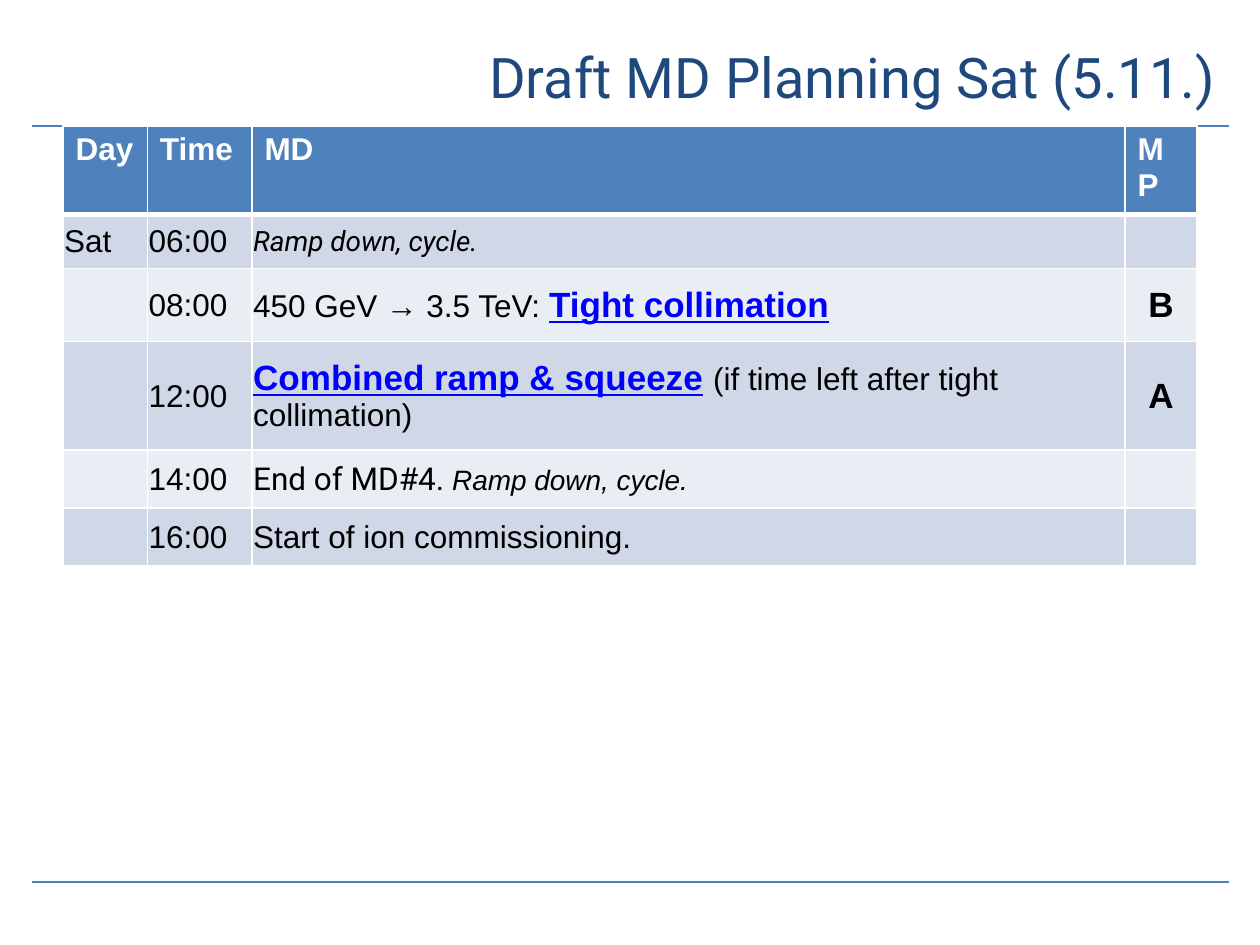
import pptx
import pptx.util
import pptx.dml.color
import pptx.enum.shapes
import pptx.enum.text
import pptx.oxml
import pptx.oxml.ns
from lxml import etree

Inches = pptx.util.Inches
Pt = pptx.util.Pt
ALIGN = pptx.enum.text.PP_ALIGN
MIDDLE = pptx.enum.text.MSO_ANCHOR.MIDDLE

HEADER, BAND, LIGHT = "4F81BD", "D0D8E8", "E9EDF4"
COLS = [0.67, 0.83, 6.93, 0.57]
ROWS = [0.41, 0.43, 0.58, 0.86, 0.46, 0.46]
HEADINGS = ["Day", "Time", "MD", "MP"]

# Run formats
LINK = dict(size=20, color="0000FF", bold=True, underline=True)
NOTE = dict(size=16, italic=True)

# Day, time, runs of the MD column, MP class
SCHEDULE = [
    ("Sat", "06:00", [("Ramp down, cycle.", dict(NOTE, font="Roboto"))], ""),
    ("", "08:00", [("450 GeV → 3.5 TeV: ", {}), ("Tight collimation", LINK)], "B"),
    ("", "12:00", [("Combined ramp & squeeze", LINK), (" ", dict(size=20)),
                   ("(if time left after tight collimation)", {})], "A"),
    ("", "14:00", [("End of MD#4. ", dict(font="Roboto")),
                   ("Ramp down, cycle.", NOTE)], ""),
    ("", "16:00", [("Start of ion commissioning.", {})], ""),
]


def rgb(value):
    return pptx.dml.color.RGBColor.from_string(value)


def add_run(p, text, size=18, font="Arial", color="000000", bold=False,
            italic=False, underline=False):
    r = p.add_run()
    r.text = text
    r.font.size = Pt(size)
    r.font.name = font
    r.font.color.rgb = rgb(color)
    r.font.bold = bold
    r.font.italic = italic
    r.font.underline = underline


def add_rule(s, y):
    line = s.shapes.add_connector(pptx.enum.shapes.MSO_CONNECTOR.STRAIGHT,
                                  Inches(0.25), Inches(y), Inches(9.75), Inches(y))
    line.line.color.rgb = rgb("4B7EBC")
    line.line.width = Pt(1.5)
    etree.SubElement(line._element.spPr, pptx.oxml.ns.qn("a:effectLst"))


def add_title(s, text):
    sp = s.shapes.add_textbox(Inches(1.75), Inches(0.17), Inches(8), Inches(0.87))
    tf = sp.text_frame
    tf.word_wrap = True
    tf.vertical_anchor = MIDDLE
    p = tf.paragraphs[0]
    p.alignment = ALIGN.RIGHT
    add_run(p, text, size=32, font="Roboto", color="1F497D")


def style_cell(cell, fill, bottom=1, top=1):
    cell.fill.solid()
    cell.fill.fore_color.rgb = rgb(fill)
    tcPr = cell._tc.get_or_add_tcPr()
    # Borders come before the fill in the cell properties
    for i, (side, width) in enumerate(dict(L=1, R=1, T=top, B=bottom).items()):
        tcPr.insert(i, pptx.oxml.parse_xml(
            f'<a:ln{side} {pptx.oxml.ns.nsdecls("a")} w="{Pt(width)}"><a:solidFill>'
            f'<a:srgbClr val="FFFFFF"/></a:solidFill></a:ln{side}>'))


def fill_cell(cell, runs, align=None):
    cell.vertical_anchor = MIDDLE
    cell.margin_left = cell.margin_right = cell.margin_top = Inches(0.01)
    cell.margin_bottom = 0
    p = cell.text_frame.paragraphs[0]
    p.alignment = align
    for text, fmt in runs:
        add_run(p, text, **fmt)


def add_schedule(s):
    table = s.shapes.add_table(len(ROWS), len(COLS), Inches(0.5), Inches(1),
                               Inches(sum(COLS)), Inches(sum(ROWS))).table
    for col, width in zip(table.columns, COLS):
        col.width = Inches(width)
    for row, height in zip(table.rows, ROWS):
        row.height = Inches(height)

    # Header row
    for c, text in enumerate(HEADINGS):
        cell = table.cell(0, c)
        style_cell(cell, HEADER, bottom=3)
        add_run(cell.text_frame.paragraphs[0], text, color="FFFFFF", bold=True)

    # Banded body rows
    for r, (day, time, activity, mp) in enumerate(SCHEDULE, 1):
        contents = [[(day, {})], [(time, {})], activity,
                    [(mp, dict(size=20, bold=True))]]
        for c, runs in enumerate(contents):
            cell = table.cell(r, c)
            style_cell(cell, BAND if r % 2 else LIGHT, top=3 if r == 1 else 1)
            if runs[0][0]:
                fill_cell(cell, runs, ALIGN.CENTER if c == 3 else None)


def main():
    prs = pptx.Presentation()
    prs.slide_width, prs.slide_height = Inches(10), Inches(7.5)
    s = prs.slides.add_slide(prs.slide_layouts[6])
    for y in (1, 7):
        add_rule(s, y)
    add_title(s, "Draft MD Planning Sat (5.11.)")
    add_schedule(s)
    prs.save("out.pptx")


if __name__ == "__main__":
    main()
